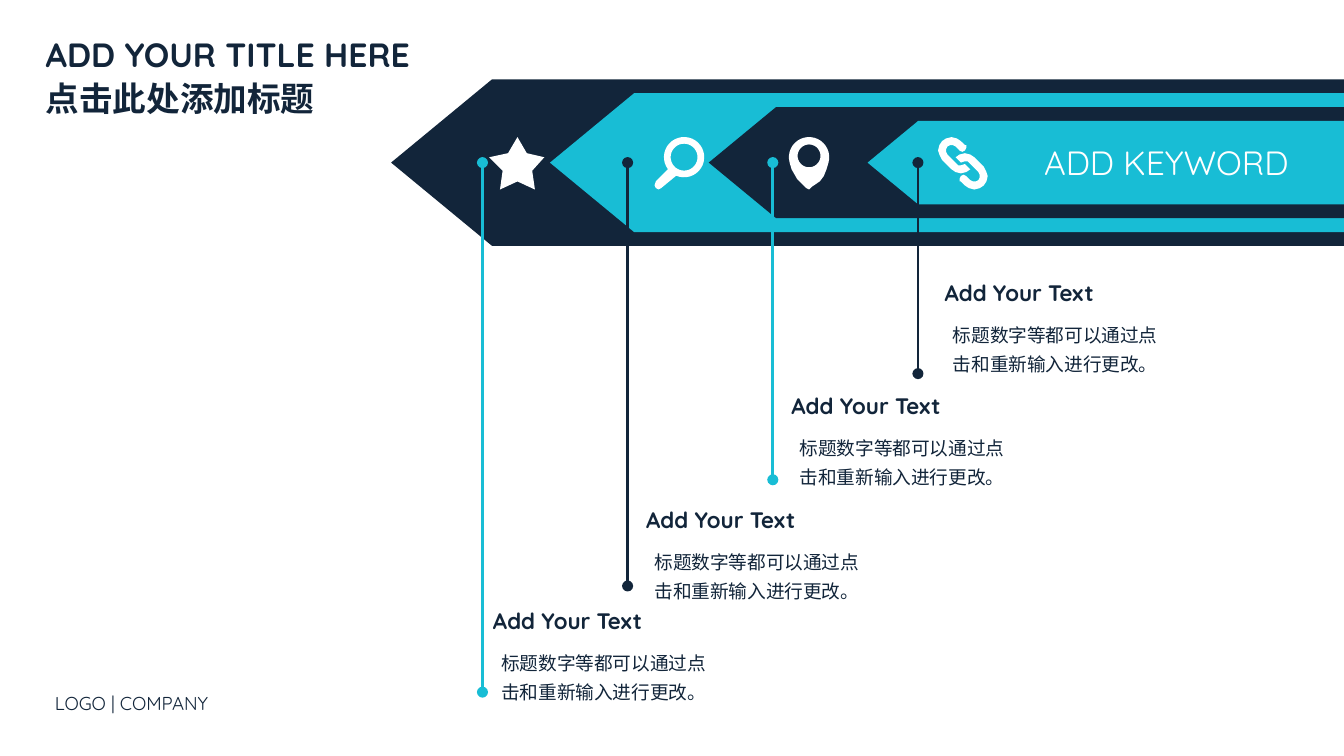
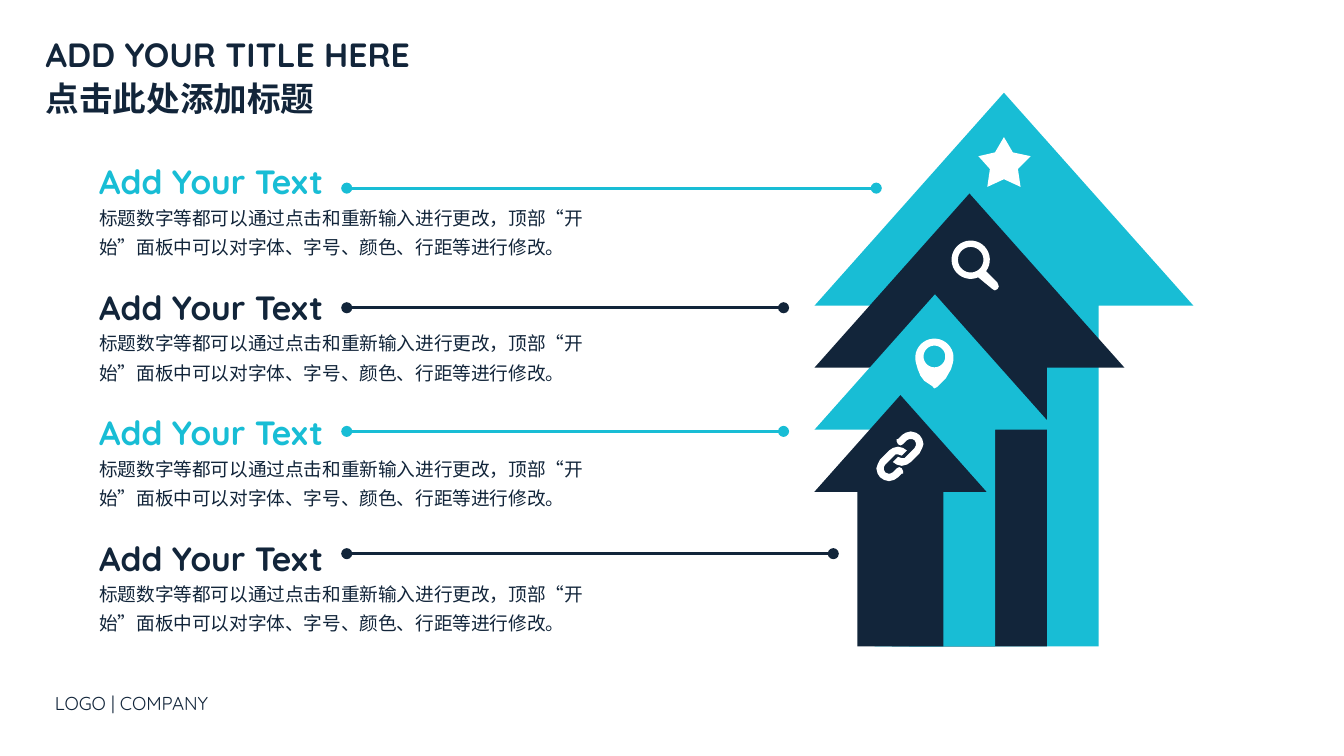
from math import cos, radians, sin

from lxml.etree import SubElement
from pptx import Presentation
from pptx.dml.color import RGBColor
from pptx.enum.shapes import MSO_CONNECTOR, MSO_SHAPE
from pptx.enum.text import MSO_ANCHOR, MSO_AUTO_SIZE, PP_ALIGN
from pptx.oxml.ns import qn
from pptx.util import Pt

PX = 9144
PAGE_WIDTH, PAGE_HEIGHT = 1000, 562.5
NAVY = RGBColor(0x12, 0x25, 0x3A)
CYAN = RGBColor(0x18, 0xBD, 0xD5)
WHITE = RGBColor(0xFF, 0xFF, 0xFF)
FONT = "Quicksand"

TITLE = ["ADD YOUR TITLE HERE", "点击此处添加标题"]
FOOTER = "LOGO | COMPANY"
KEYWORD = "ADD KEYWORD"
HEADING = "Add Your Text"
SHORT_BODY = "标题数字等都可以通过点击和重新输入进行更改。"
LONG_BODY = "标题数字等都可以通过点击和重新输入进行更改，顶部“开始”面板中可以对字体、字号、颜色、行距等进行修改。"

BAND_COLOURS = [NAVY, CYAN, NAVY, CYAN]
ARROW_COLOURS = [CYAN, NAVY, CYAN, NAVY]
STEP_HEADINGS = [(357, 447), (471, 372), (579, 287), (693, 203)]
ROW_LINES = [(652, 140), (583, 229), (583, 321), (620, 412)]
BAND_ICONS = [("star", 364, 102), ("lens", 487, 102), ("pin", 587, 102), ("link", 698, 102)]
ARROW_ICONS = [("star", 728, 102), ("lens", 709, 179), ("pin", 681, 252), ("link", 652, 321)]


def arc(x, y, radius, start=0, end=350):
    return [(x + radius * cos(radians(a)), y + radius * sin(radians(a)))
            for a in range(start, end + 1, 10)]


LINK_HALF = [
    (10, 0), (6, 1), (3, 3), (1, 6), (0, 10), (1, 13), (3, 17), (10, 24),
    (13, 26), (17, 27), (21, 26), (24, 24), (20, 20), (17, 21), (15, 21),
    (14, 20), (7, 13), (6, 11), (6, 9), (7, 7), (9, 6), (11, 6), (13, 7),
    (16, 10), (18, 11), (20, 10), (21, 8), (21, 6), (20, 6), (17, 3), (14, 1),
]
ICONS = {
    "star": (41, [[(21, 0), (28, 12), (41, 15), (32, 25), (34, 39),
                   (21, 33), (8, 39), (10, 25), (0, 15), (14, 12)]]),
    "lens": (36, [arc(22, 15, 10),
                  arc(22, 15, 15, 143, 478)
                  + [(5, 38), (3, 39), (1, 38), (0, 36), (1, 33)]]),
    "pin": (30, [arc(15, 14, 8.5),
                 arc(15, 15, 15, 165, 375)
                 + [(28, 24), (26, 29), (23, 33), (17, 37), (15, 39),
                    (13, 38), (6, 31), (2, 24)]]),
    "link": (37, [LINK_HALF, [(37 - x, 39 - y) for x, y in LINK_HALF]]),
}


def px(*lengths):
    return [round(length * PX) for length in lengths]


def place(box, left, top, width, height):
    box.left, box.top, box.width, box.height = px(left, top, width, height)


def write(box, *lines, size=10, colour=NAVY, bold=False, align=PP_ALIGN.LEFT,
          spacing=None, wrap=True):
    frame = box.text_frame
    frame.word_wrap = wrap
    frame.auto_size = MSO_AUTO_SIZE.SHAPE_TO_FIT_TEXT
    frame.vertical_anchor = MSO_ANCHOR.TOP
    for index, line in enumerate(lines):
        para = frame.add_paragraph() if index else frame.paragraphs[0]
        para.alignment = align
        if spacing:
            para.line_spacing = spacing
        span = para.add_run()
        span.text = line
        span.font.name = FONT
        span.font.size = Pt(size)
        span.font.bold = bold
        span.font.color.rgb = colour


def add_text(page, area, *lines, **look):
    write(page.shapes.add_textbox(*px(*area)), *lines, **look)


def paint(shape, colour):
    shape.shadow.inherit = False
    shape.fill.solid()
    shape.fill.fore_color.rgb = colour
    shape.line.fill.background()


def add_block(page, kind, area, colour, adjustments):
    shape = page.shapes.add_shape(kind, *px(*area))
    for index, value in enumerate(adjustments):
        shape.adjustments[index] = value
    paint(shape, colour)
    return shape


def add_icon(page, name, left, top, zoom=1, mirrored=False):
    width, contours = ICONS[name]
    builder = None
    for contour in contours:
        points = [px(zoom * (width - x if mirrored else x), zoom * y)
                  for x, y in contour]
        if builder is None:
            builder = page.shapes.build_freeform(*points[0])
        else:
            builder.move_to(*points[0])
        builder.add_line_segments(points[1:], close=True)
    paint(builder.convert_to_shape(*px(left, top)), WHITE)


def add_dotted_line(page, start, end, colour):
    line = page.shapes.add_connector(MSO_CONNECTOR.STRAIGHT, *px(*start, *end))
    line.line.color.rgb = colour
    line.line.width = Pt(1.5)
    outline = line.line._get_or_add_ln()
    for tag in ("a:headEnd", "a:tailEnd"):
        SubElement(outline, qn(tag), type="oval")
    SubElement(line._element.spPr, qn("a:effectLst"))


def add_page(deck):
    page = deck.slides.add_slide(deck.slide_layouts[5])
    title = page.shapes.title
    place(title, 24, 17, 296, 76)
    write(title, *TITLE, size=18, bold=True, spacing=1.1)
    add_text(page, (31, 510, 153, 27), FOOTER, wrap=False)
    return page


def add_bands_page(deck):
    page = add_page(deck)
    for index, colour in enumerate(BAND_COLOURS):
        share = (6 - index) / 6
        width, height = 709 * share, 124 * share
        area = (PAGE_WIDTH - width, 121 - height / 2, width, height)
        band = add_block(page, MSO_SHAPE.PENTAGON, area, colour, [0.606])
        band.rotation = 180
    for name, left, top in BAND_ICONS:
        add_icon(page, name, left, top)
    add_text(page, (767, 101, 211, 40), KEYWORD, size=18, colour=WHITE, wrap=False)
    for index, (left, top) in enumerate(STEP_HEADINGS):
        x = 359 + 108 * index
        colour = CYAN if index % 2 == 0 else NAVY
        add_dotted_line(page, (x, 121), (x, 515 - 79 * index), colour)
        add_text(page, (left - 2, top + 28, 180, 53), SHORT_BODY,
                 align=PP_ALIGN.RIGHT, spacing=1.3)
        add_text(page, (left, top, 133, 30), HEADING, size=12, bold=True, wrap=False)


def add_arrows_page(deck):
    page = add_page(deck)
    for index, colour in enumerate(ARROW_COLOURS):
        height = 412 - 75 * index
        area = (606, 481 - height, height * 282 / 412, height)
        add_block(page, MSO_SHAPE.UP_ARROW, area, colour, [0.5, 0.562])
    for name, left, top in ARROW_ICONS:
        add_icon(page, name, left, top, zoom=0.95, mirrored=True)
    for index, (colour, (x, y)) in enumerate(zip(ARROW_COLOURS, ROW_LINES)):
        top = 115 + 280 * index / 3
        add_text(page, (64, top + 29, 403, 54), LONG_BODY, spacing=1.3)
        add_text(page, (64, top, 190, 40), HEADING, size=18, colour=colour, bold=True)
        add_dotted_line(page, (x, y), (258, y), colour)


def main():
    deck = Presentation()
    deck.slide_width, deck.slide_height = px(PAGE_WIDTH, PAGE_HEIGHT)
    add_bands_page(deck)
    add_arrows_page(deck)
    deck.save("out.pptx")


if __name__ == "__main__":
    main()
